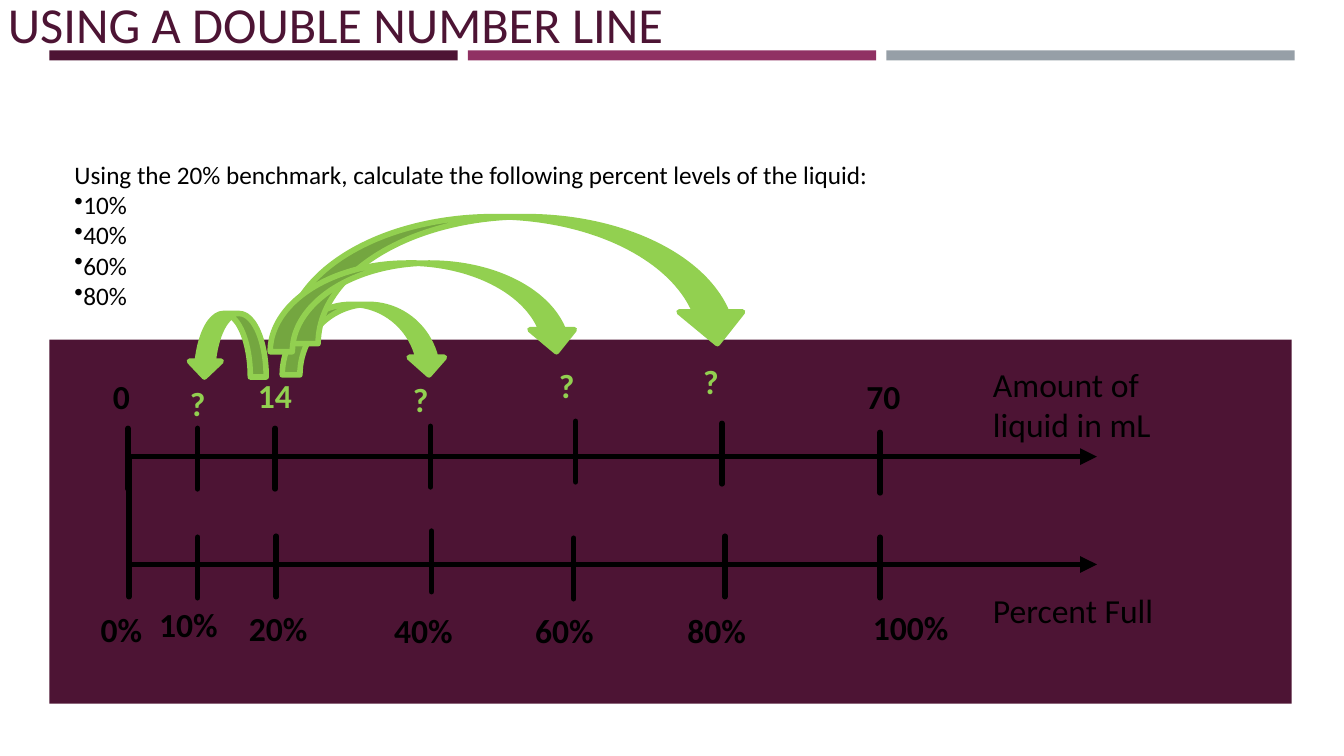
from lxml.etree import SubElement
from pptx import Presentation
from pptx.dml.color import RGBColor
from pptx.enum.shapes import MSO_CONNECTOR, MSO_SHAPE
from pptx.enum.text import MSO_ANCHOR
from pptx.oxml.ns import qn
from pptx.util import Inches, Pt

COLORS = {"plum": "4D1434", "magenta": "903163", "gray": "969FA7",
          "green": "92D050", "black": "000000"}
FONT = "Calibri"
LINE_WIDTH = Pt(4)
TICK = 0.6
AXIS_LEFT, AXIS_RIGHT = 1.28, 10.88
AMOUNT_Y, PERCENT_Y = 4.53, 5.6


def rgb(color):
    return RGBColor.from_string(COLORS[color])


def add_band(slide, left, top, width, height, color):
    band = slide.shapes.add_shape(MSO_SHAPE.RECTANGLE, Inches(left), Inches(top),
                                  Inches(width), Inches(height))
    band.shadow.inherit = False
    band.fill.solid()
    band.fill.fore_color.rgb = rgb(color)
    band.line.fill.background()


def add_text(slide, left, top, width, height, lines, size=24, color="black",
             bold=False, anchor=MSO_ANCHOR.TOP, bulleted_from=None):
    box = slide.shapes.add_textbox(Inches(left), Inches(top), Inches(width), Inches(height))
    frame = box.text_frame
    frame.word_wrap = True
    frame.vertical_anchor = anchor
    frame.text = "\n".join(lines)
    for index, paragraph in enumerate(frame.paragraphs):
        if bulleted_from is not None and index >= bulleted_from:
            SubElement(paragraph._p.get_or_add_pPr(), qn("a:buChar"), char="•")
        font = paragraph.font
        font.name, font.size, font.bold = FONT, Pt(size), bold
        font.color.rgb = rgb(color)


def add_line(slide, x1, y1, x2, y2, arrow=False):
    line = slide.shapes.add_connector(MSO_CONNECTOR.STRAIGHT, Inches(x1), Inches(y1),
                                      Inches(x2), Inches(y2))
    line.line.color.rgb = rgb("black")
    line.line.width = LINE_WIDTH
    outline = line.line._get_or_add_ln()
    outline.set("cap", "rnd")
    if arrow:
        SubElement(outline, qn("a:tailEnd"), type="triangle")
    SubElement(line._element.spPr, qn("a:effectLst"))


def add_jump(slide, left, top, width, height, backward=False):
    """Curved arrow arching over the amounts, to the right unless backward."""
    jump = slide.shapes.add_shape(MSO_SHAPE.CURVED_UP_ARROW, Inches(left), Inches(top),
                                  Inches(width), Inches(height))
    jump.shadow.inherit = False
    jump.fill.solid()
    jump.fill.fore_color.rgb = rgb("green")
    jump.line.color.rgb = rgb("green")
    jump.line.width = LINE_WIDTH
    if backward:
        jump.rotation = 180
    else:
        jump._element.spPr.find(qn("a:xfrm")).set("flipV", "1")


def main():
    prs = Presentation()
    prs.slide_width, prs.slide_height = Inches(13.33), Inches(7.5)
    slide = prs.slides.add_slide(prs.slide_layouts[6])

    # Header bars, panel and title
    for index, color in enumerate(("plum", "magenta", "gray")):
        add_band(slide, 0.49 + 4.15 * index, 0.5, 4.05, 0.1, color)
    add_band(slide, 0.49, 3.37, 12.32, 3.61, "plum")
    add_text(slide, -0.02, -0.23, 12.02, 0.81, ["USING A DOUBLE NUMBER LINE"],
             size=36, color="plum", anchor=MSO_ANCHOR.BOTTOM)

    # Task
    add_text(slide, 0.64, 1.53, 12.02, 1.92,
             ["Using the 20% benchmark, calculate the following percent levels of the liquid:",
              "10%", "40%", "60%", "80%"], size=18, bulleted_from=1)

    # Both axes, joined at zero
    for y in (AMOUNT_Y, PERCENT_Y):
        add_line(slide, AXIS_LEFT, y, AXIS_RIGHT, y, arrow=True)
    add_line(slide, AXIS_LEFT, AMOUNT_Y, AXIS_LEFT, PERCENT_Y)
    add_text(slide, 9.75, 3.56, 2.25, 0.91, ["Amount of liquid in mL"])
    add_text(slide, 9.75, 5.8, 2.25, 0.5, ["Percent Full"])

    # Tick positions (x, top) on the amount line and on the percent line
    ticks = [(1.27, 4.25), (1.96, 4.25), (2.73, 4.25), (4.27, 4.23),
             (5.71, 4.18), (7.16, 4.2), (8.73, 4.29),
             (1.28, 5.32), (1.96, 5.33), (2.74, 5.32), (4.28, 5.27),
             (5.69, 5.34), (7.19, 5.32), (8.73, 5.33)]
    for x, top in ticks:
        add_line(slide, x, top, x, top + TICK)

    # Jumps from the 20% benchmark to 10%, 40%, 80% and 60%
    add_jump(slide, 1.87, 3.11, 0.77, 0.63, backward=True)
    add_jump(slide, 2.8, 3.02, 1.63, 0.7)
    add_jump(slide, 2.84, 2.15, 4.59, 1.26)
    add_jump(slide, 2.68, 2.61, 3.06, 0.88)

    # Labels: text, left, top, width, color
    labels = [
        ("0", 1.02, 3.68, 0.62, "black"),
        (" ?", 1.71, 3.75, 0.62, "green"),
        ("14", 2.46, 3.67, 0.62, "green"),
        (" ?", 3.92, 3.71, 0.62, "green"),
        (" ?", 5.37, 3.57, 0.62, "green"),
        (" ?", 6.8, 3.53, 0.62, "green"),
        (" 70", 8.42, 3.68, 0.76, "black"),
        ("0%", 0.9, 5.99, 0.8, "black"),
        ("10%", 1.48, 5.94, 1.04, "black"),
        ("20%", 2.37, 5.98, 1.04, "black"),
        ("40%", 3.81, 6, 1.04, "black"),
        ("60%", 5.21, 6, 1.04, "black"),
        ("80%", 6.72, 6, 1.04, "black"),
        ("100%", 8.56, 5.97, 1.07, "black"),
    ]
    for label, left, top, width, color in labels:
        add_text(slide, left, top, width, 0.5, [label], color=color, bold=True)

    prs.save("out.pptx")


if __name__ == "__main__":
    main()
